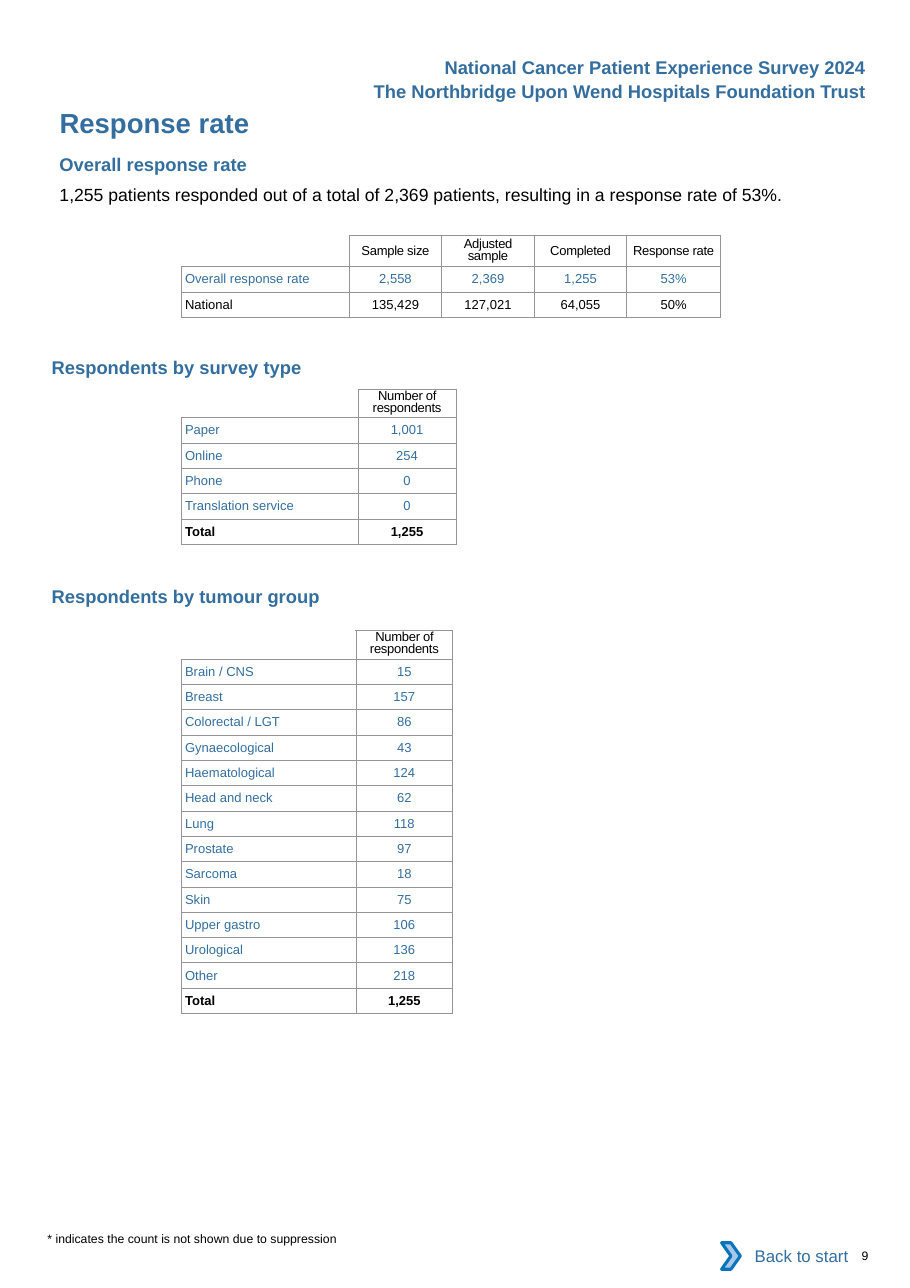
from lxml.etree import SubElement
from pptx import Presentation
from pptx.dml.color import RGBColor
from pptx.enum.shapes import MSO_SHAPE
from pptx.enum.text import MSO_ANCHOR, PP_ALIGN
from pptx.oxml.ns import qn
from pptx.util import Pt

PX = 9144
BLUE = RGBColor(0x33, 0x6E, 0x9F)
BLACK = RGBColor(0, 0, 0)
WHITE = RGBColor(255, 255, 255)
CHEVRON_FILL = RGBColor(0xA8, 0xC7, 0xE9)
CHEVRON_LINE = RGBColor(0x0A, 0x74, 0xBB)
BORDER_HEX = "939598"
FONT = "Arial"
ROW_HEIGHT = 23
TABLE_LEFT = 165
WRAPPED_HEADERS = {"Adjusted sample", "Number of respondents"}

OVERALL = [
    ("", "Sample size", "Adjusted sample", "Completed", "Response rate"),
    ("Overall response rate", "2,558", "2,369", "1,255", "53%"),
    ("National", "135,429", "127,021", "64,055", "50%"),
]
SURVEY_TYPES = [
    ("", "Number of respondents"),
    ("Paper", "1,001"),
    ("Online", "254"),
    ("Phone", "0"),
    ("Translation service", "0"),
    ("Total", "1,255"),
]
TUMOUR_GROUPS = [
    ("", "Number of respondents"),
    ("Brain / CNS", "15"),
    ("Breast", "157"),
    ("Colorectal / LGT", "86"),
    ("Gynaecological", "43"),
    ("Haematological", "124"),
    ("Head and neck", "62"),
    ("Lung", "118"),
    ("Prostate", "97"),
    ("Sarcoma", "18"),
    ("Skin", "75"),
    ("Upper gastro", "106"),
    ("Urological", "136"),
    ("Other", "218"),
    ("Total", "1,255"),
]


def scaled(*lengths):
    return [length * PX for length in lengths]


def write(frame, text, size=12, color=BLUE, bold=False, align=PP_ALIGN.LEFT,
          line_points=None, spacing=0):
    para = frame.paragraphs[0]
    para.alignment = align
    if line_points:
        para.line_spacing = Pt(line_points)
    span = para.add_run()
    span.text = text
    span.font.name = FONT
    span.font.size = Pt(size)
    span.font.bold = bold
    span.font.color.rgb = color
    if spacing:
        span.font._element.set("spc", str(spacing))


def set_insets(frame, across=0, down=0):
    frame.margin_left = frame.margin_right = across * PX
    frame.margin_top = frame.margin_bottom = down * PX


def add_text(page, box, text, across=0, down=0, wrap=True, **style):
    frame = page.shapes.add_textbox(*scaled(*box)).text_frame
    frame.word_wrap = wrap
    set_insets(frame, across, down)
    write(frame, text, **style)


def add_title(page, box, text):
    title = page.shapes.title
    title.left, title.top, title.width, title.height = scaled(*box)
    frame = title.text_frame
    frame.vertical_anchor = MSO_ANCHOR.TOP
    frame.word_wrap = True
    set_insets(frame)
    write(frame, text, size=18, bold=True)


def set_borders(cell, sides):
    properties = cell._tc.get_or_add_tcPr()
    for side in "LRTB":
        shown = side in sides
        line = SubElement(properties, qn(f"a:ln{side}"), w=str(Pt(0.5) if shown else 0))
        if shown:
            fill = SubElement(line, qn("a:solidFill"))
            SubElement(fill, qn("a:srgbClr"), val=BORDER_HEX)
        else:
            SubElement(line, qn("a:noFill"))


def format_cell(cell, text, row, column):
    cell.margin_left = cell.margin_right = 3 * PX
    cell.margin_top = cell.margin_bottom = 0
    cell.vertical_anchor = MSO_ANCHOR.MIDDLE
    set_borders(cell, "LRTB" if text else "RB")
    cell.fill.background()
    if not text:
        SubElement(cell.text_frame.paragraphs[0]._p, qn("a:endParaRPr"), sz="850")
        return
    write(
        cell.text_frame, text, size=8.5,
        color=BLACK if row["dark"] else BLUE,
        bold=row["total"],
        align=PP_ALIGN.CENTER if column else PP_ALIGN.LEFT,
        line_points=7.6 if text in WRAPPED_HEADERS else None,
        spacing=-20 if row["header"] else 0,
    )


def add_count_table(page, left, top, widths, header_height, records):
    heights = [header_height] + [ROW_HEIGHT] * (len(records) - 1)
    box = scaled(left, top, sum(widths), sum(heights))
    table = page.shapes.add_table(len(records), len(widths), *box).table
    table.first_row = table.horz_banding = False
    for column, width in zip(table.columns, widths):
        column.width = width * PX
    for index, (record, height) in enumerate(zip(records, heights)):
        table.rows[index].height = height * PX
        row = {
            "header": index == 0,
            "total": record[0] == "Total",
            "dark": record[0] in ("", "National", "Total"),
        }
        for column, text in enumerate(record):
            format_cell(table.cell(index, column), text, row, column)


def add_running_head(page, left, top, width):
    lines = (
        "National Cancer Patient Experience Survey 2024",
        "The Northbridge Upon Wend Hospitals Foundation Trust",
    )
    for index, text in enumerate(lines):
        add_text(page, (left, top + 22 * index, width, 30), text, across=10, down=5,
                 wrap=False, bold=True, align=PP_ALIGN.RIGHT)


def add_back_button(page, left, top):
    group = page.shapes.add_group_shape()
    label = group.shapes.add_shape(MSO_SHAPE.RECTANGLE, *scaled(left + 7, top, 118, 42))
    label.shadow.inherit = False
    label.fill.solid()
    label.fill.fore_color.rgb = WHITE
    label.line.fill.background()
    label.text_frame.vertical_anchor = MSO_ANCHOR.MIDDLE
    write(label.text_frame, "Back to start", size=11, align=PP_ALIGN.RIGHT)
    chevron = group.shapes.add_shape(MSO_SHAPE.CHEVRON, *scaled(left, top + 9, 17, 24))
    chevron.shadow.inherit = False
    chevron.fill.solid()
    chevron.fill.fore_color.rgb = CHEVRON_FILL
    chevron.line.color.rgb = CHEVRON_LINE
    chevron.line.width = Pt(2)


def add_footer(page, left, top):
    add_text(page, (left, top, 265, 13), "* indicates the count is not shown due to suppression",
             size=8, color=BLACK)
    add_back_button(page, left + 612, top + 1)
    add_text(page, (left + 739, top + 15, 41, 13), "9", size=8, color=BLACK)


def build_response_page(deck):
    page = deck.slides.add_slide(deck.slide_layouts[5])
    add_running_head(page, 303, 46, 493)
    add_title(page, (54, 96, 413, 30), "Response rate")
    add_text(page, (54, 139, 413, 20), "Overall response rate", bold=True)
    add_text(page, (54, 167, 720, 19),
             "1,255 patients responded out of a total of 2,369 patients, "
             "resulting in a response rate of 53%.", size=11.5, color=BLACK)
    add_count_table(page, TABLE_LEFT, 214, (152, 84, 84, 84, 85), 28, OVERALL)
    add_text(page, (47, 323, 230, 20), "Respondents by survey type", bold=True)
    add_count_table(page, TABLE_LEFT, 353, (160, 89), 26, SURVEY_TYPES)
    add_text(page, (47, 531, 246, 20), "Respondents by tumour group", bold=True)
    add_count_table(page, TABLE_LEFT, 572, (158, 88), 26, TUMOUR_GROUPS)
    add_footer(page, 43, 1118)


def main():
    deck = Presentation()
    deck.slide_width, deck.slide_height = scaled(826, 1169)
    build_response_page(deck)
    deck.save("out.pptx")


if __name__ == "__main__":
    main()
